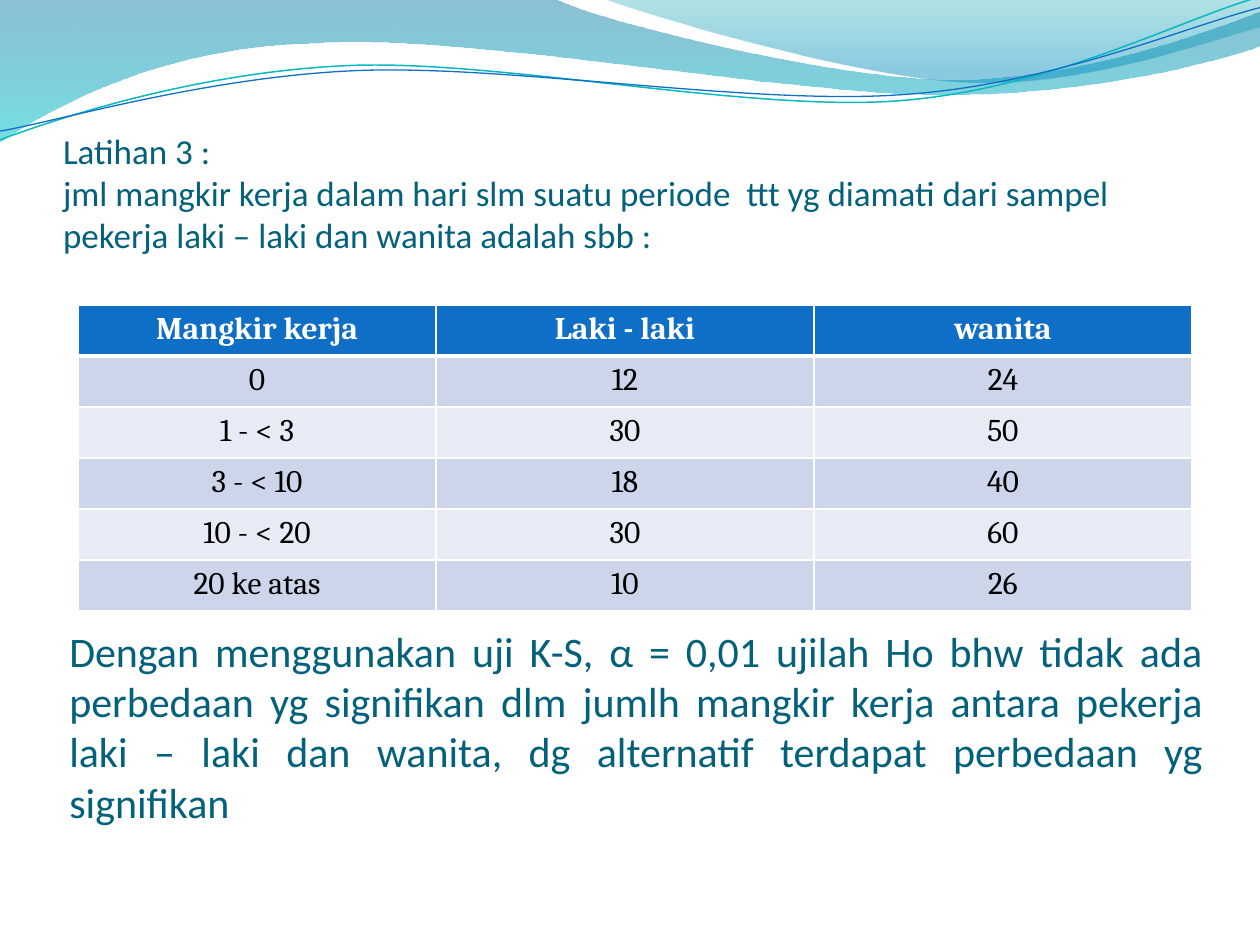
import math

from lxml import etree
from pptx import Presentation
from pptx.dml.color import RGBColor
from pptx.enum import text
from pptx.oxml.ns import qn
from pptx.util import Inches, Pt

WHITE = RGBColor(0xFF, 0xFF, 0xFF)
BLACK = RGBColor(0, 0, 0)
INK = RGBColor(0x04, 0x61, 0x7B)
BLUE = RGBColor(0x0F, 0x6F, 0xC6)
TEAL = RGBColor(0x0A, 0xB8, 0xBF)
DARK = RGBColor(0xCC, 0xD5, 0xEA)
PALE = RGBColor(0xE7, 0xEB, 0xF5)
DEEP = RGBColor(0x00, 0x74, 0xA1)
AQUA = RGBColor(0x00, 0xC6, 0xCF)
SEA = RGBColor(0x00, 0xA1, 0xA9)
SKY = RGBColor(0x00, 0x8B, 0xBF)

INTRO = ("Latihan 3 :",
         "jml mangkir kerja dalam hari slm suatu periode  ttt yg diamati dari "
         "sampel pekerja laki – laki dan wanita adalah sbb :")
TASK = ("Dengan menggunakan uji K-S, α = 0,01 ujilah Ho bhw tidak ada perbedaan "
        "yg signifikan dlm jumlh mangkir kerja antara pekerja laki – laki dan "
        "wanita, dg alternatif terdapat perbedaan yg signifikan")
ROWS = [("Mangkir kerja", "Laki - laki", "wanita"),
        ("0", "12", "24"),
        ("1 - < 3", "30", "50"),
        ("3 - < 10", "18", "40"),
        ("10 - < 20", "30", "60"),
        ("20 ke atas", "10", "26")]

# A step of two numbers is a straight line, one of six a Bezier curve.
# A band ends with its gradient stops: position, colour, opacity in percent.
BANDS = [
    ([(0, 0), (4.4, -0.01), (4.76, 0.17, 6.64, 0.63, 7.58, 0.63),
      (8.53, 0.63, 9.58, 0.26, 10, 0.09), (10.01, 0.36),
      (9.83, 0.44, 8.7, 0.76, 7.46, 0.75), (6.22, 0.75, 3.82, 0.28, 2.57, 0.34),
      (1.29, 0.36, 0.46, 0.83, -0.01, 1.13)],
     [(0, DEEP, 45), (1, AQUA, 55)]),
    ([(4.79, -0.01), (5.09, 0.11, 6.82, 0.62, 7.69, 0.65),
      (8.56, 0.69, 9.61, 0.32, 10, 0.21), (10, 0)],
     [(0, SEA, 30), (0.8, SKY, 45)]),
]
# A line ends with its centre, colour and width.
LINES = [
    ([(0, 1.11), (0.48, 0.93, 1.58, 0.57, 2.77, 0.52),
      (3.95, 0.47, 5.93, 0.89, 7.13, 0.8), (8.33, 0.71, 9.38, 0.15, 9.98, -0.02)],
     (4.99, 0.57), TEAL, 0.85),
    ([(0, 1.04), (0.47, 0.96, 1.64, 0.61, 2.83, 0.56),
      (4.03, 0.51, 5.97, 0.84, 7.17, 0.75), (8.36, 0.67, 9.41, 0.21, 10, 0.06)],
     (4.99, 0.59), BLUE, 0.75),
]
TILT = -2.7


def level(steps, mid):
    """Turn the steps about their centre to undo the tilt."""
    turn = math.radians(-TILT)
    cos, sin = math.cos(turn), math.sin(turn)
    flat = []
    for step in steps:
        spot = []
        for x, y in zip(step[::2], step[1::2]):
            x, y = x - mid[0], y - mid[1]
            spot += [mid[0] + x * cos - y * sin, mid[1] + x * sin + y * cos]
        flat.append(spot)
    return flat


def add_path(slide, left, top, steps, close):
    dots = [(left + Inches(x), top + Inches(y)) for step in steps
            for x, y in zip(step[::2], step[1::2])]
    pen = slide.shapes.build_freeform(*dots[0])
    pen.add_line_segments(dots[1:], close=close)
    shape = pen.convert_to_shape()
    shape.shadow.inherit = False
    nodes = iter(list(shape.element.iter(qn("a:lnTo"))))
    for step in steps[1:]:
        trio = [next(nodes) for _ in range(len(step) // 2)]
        if len(trio) == 3:
            bend = etree.Element(qn("a:cubicBezTo"))
            trio[0].addprevious(bend)
            for node in trio:
                bend.append(node[0])
                node.getparent().remove(node)
    return shape


def add_waves(slide, left, top):
    for steps, stops in BANDS:
        band = add_path(slide, left, top, steps, True)
        band.line.fill.background()
        band.fill.gradient()
        band.fill.gradient_angle = 270
        for stop, (place, color, _) in zip(band.fill.gradient_stops, stops):
            stop.position = place
            stop.color.rgb = color
        for tint, (_, _, alpha) in zip(band.element.iter(qn("a:srgbClr")), stops):
            etree.SubElement(tint, qn("a:alpha"), val=str(alpha * 1000))
    for steps, mid, color, width in LINES:
        curve = add_path(slide, left, top, level(steps, mid), False)
        curve.rotation = TILT
        curve.fill.background()
        curve.line.color.rgb = color
        curve.line.width = Pt(width)


def style(par, name, size, color, align, bold=False):
    par.alignment = align
    look = {"name": name, "size": Pt(size), "bold": bold}
    for font in [par.font] + [run.font for run in par.runs]:
        font.color.rgb = color
        for key, value in look.items():
            setattr(font, key, value)


def fill_box(shape, box, lines, size, align):
    """Place a text shape and set its lines, parted by line breaks."""
    place = dict(zip(("left", "top", "width", "height"), box))
    for key, value in place.items():
        setattr(shape, key, value)
    frame = shape.text_frame
    setup = {"word_wrap": True, "auto_size": text.MSO_AUTO_SIZE.NONE,
             "vertical_anchor": text.MSO_ANCHOR.BOTTOM,
             "margin_left": 0, "margin_right": 0,
             "margin_top": Inches(0.05), "margin_bottom": 0}
    for key, value in setup.items():
        setattr(frame, key, value)
    par = frame.paragraphs[0]
    for i, line in enumerate(lines):
        if i:
            par.add_line_break()
        par.add_run().text = line
    style(par, "Calibri", size, INK, align)


def add_edges(cell, widths):
    """Draw white borders; widths in points by side."""
    props = cell._tc.get_or_add_tcPr()
    for i, (side, width) in enumerate(widths.items()):
        edge = etree.Element(qn("a:ln" + side), w=str(Pt(width)))
        solid = etree.SubElement(edge, qn("a:solidFill"))
        etree.SubElement(solid, qn("a:srgbClr"), val=str(WHITE))
        props.insert(i, edge)


def add_grid(slide, left, top, width, height):
    grid = slide.shapes.add_table(len(ROWS), 3, left, top, width, height).table
    for col, size in zip(grid.columns, (2.84, 3, 3)):
        col.width = Inches(size)
    for r, row in enumerate(ROWS):
        head = r == 0
        for c, words in enumerate(row):
            cell = grid.cell(r, c)
            cell.text = words
            style(cell.text_frame.paragraphs[0], "Cambria", 18,
                  WHITE if head else BLACK, text.PP_ALIGN.CENTER, head)
            cell.fill.solid()
            cell.fill.fore_color.rgb = BLUE if head else DARK if r % 2 else PALE
            add_edges(cell, {"L": 1, "R": 1, "T": 3 if r == 1 else 1,
                             "B": 3 if head else 1})


def main():
    deck = Presentation()
    deck.slide_width, deck.slide_height = Inches(10), Inches(7.5)
    slide = deck.slides.add_slide(deck.slide_layouts[5])
    add_waves(slide, 0, 0)
    title = slide.shapes.title
    title.element.getparent().append(title.element)
    fill_box(title, [Inches(n) for n in (0.5, 0.77, 9, 1.26)],
             INTRO, 20, text.PP_ALIGN.LEFT)
    add_grid(slide, Inches(0.62), Inches(2.42), Inches(8.84), Inches(2.43))
    box = [Inches(n) for n in (0.55, 4.84, 9, 1.72)]
    fill_box(slide.shapes.add_textbox(*box), box, [TASK], 24, text.PP_ALIGN.JUSTIFY)
    deck.save("out.pptx")


if __name__ == "__main__":
    main()
